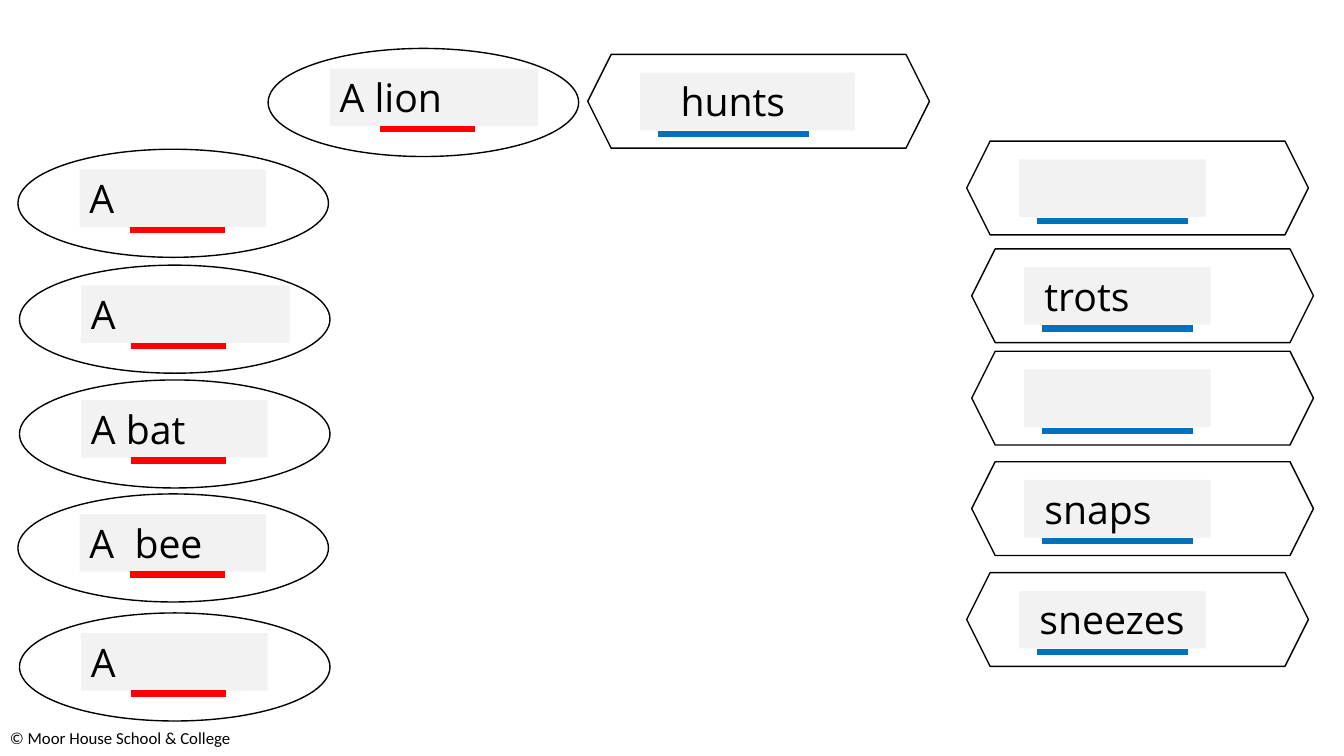
import pptx
import pptx.util
import pptx.dml.color
import pptx.enum.shapes
import pptx.enum.text
from dataclasses import dataclass
from lxml import etree

Pt = pptx.util.Pt
RGB = pptx.dml.color.RGBColor.from_string
SHAPE = pptx.enum.shapes.MSO_SHAPE
A_NS = "http://schemas.openxmlformats.org/drawingml/2006/main"


@dataclass(frozen=True)
class Theme:
    ink: str = "000000"
    label_fill: str = "F2F2F2"
    noun: str = "FF0000"
    verb: str = "0070C0"
    word_font: str = "Open Sans"
    word_size: float = 28
    footer_font: str = "Calibri"
    footer_size: float = 12
    outline: float = 1
    underline: float = 4.5


@dataclass(frozen=True)
class CardKind:
    """Preset, size, and the offsets of label and underline within a card."""
    preset: int
    size: tuple
    label: tuple
    underline: tuple
    underline_width: float
    color: str


THEME = Theme()
NOUN = CardKind(SHAPE.OVAL, (221.8, 77.2), (44, 14.4), (80, 57.6), 67.7, THEME.noun)
VERB = CardKind(SHAPE.HEXAGON, (244.1, 67), (37.4, 13), (50.4, 56.9), 107.5, THEME.verb)
LABEL_HEIGHT = 41.2
NARROW, WIDE, WIDEST = 133.2, 149, 153.4


class Deck:
    def __init__(self, slide, theme):
        self.s = slide
        self.theme = theme

    def text(self, shapes, box, words, font, size, indent=0):
        sp = shapes.add_textbox(*map(Pt, box))
        tf = sp.text_frame
        tf.word_wrap = True
        tf.auto_size = pptx.enum.text.MSO_AUTO_SIZE.NONE
        tf.margin_left = Pt(7.2 + indent)
        p = tf.paragraphs[0]
        p.text = words
        p.font.name = font
        p.font.size = Pt(size)
        p.font.color.rgb = RGB(self.theme.ink)
        return sp

    def outline(self, shapes, preset, box):
        sp = shapes.add_shape(preset, *map(Pt, box))
        sp.shadow.inherit = False
        sp.fill.background()
        sp.line.color.rgb = RGB(self.theme.ink)
        sp.line.width = Pt(self.theme.outline)

    def underline(self, shapes, x, y, width, color):
        cx = shapes.add_connector(pptx.enum.shapes.MSO_CONNECTOR.STRAIGHT,
                                  Pt(x), Pt(y), Pt(x + width), Pt(y))
        cx.line.color.rgb = RGB(color)
        cx.line.width = Pt(self.theme.underline)
        etree.SubElement(cx._element.spPr, f"{{{A_NS}}}effectLst")

    def card(self, kind, x, y, words, label_width=NARROW, indent=0):
        shapes = self.s.shapes.add_group_shape().shapes
        self.outline(shapes, kind.preset, (x, y, *kind.size))
        dx, dy = kind.label
        label = self.text(shapes, (x + dx, y + dy, label_width, LABEL_HEIGHT), words,
                          self.theme.word_font, self.theme.word_size, indent)
        label.fill.solid()
        label.fill.fore_color.rgb = RGB(self.theme.label_fill)
        dx, dy = kind.underline
        self.underline(shapes, x + dx, y + dy, kind.underline_width, kind.color)

    def footer(self, words):
        self.text(self.s.shapes, (0, 516.2, 307.4, 21.6), words,
                  self.theme.footer_font, self.theme.footer_size)


def main():
    prs = pptx.Presentation()
    prs.slide_width, prs.slide_height = Pt(960), Pt(540)
    deck = Deck(prs.slides.add_slide(prs.slide_layouts[6]), THEME)

    deck.footer("© Moor House School & College")

    # Example sentence
    deck.card(NOUN, 191.5, 34.6, "A lion", WIDE)
    deck.card(VERB, 419.8, 38.9, "hunts", WIDEST, indent=21.8)

    # Nouns on the left
    for x, y, words, width in [
        (12.8, 106.6, "A", NARROW),
        (13.9, 189.4, "A", WIDE),
        (13.9, 271.4, "A bat", NARROW),
        (12.8, 352.8, "A  bee", NARROW),
        (13.9, 437.8, "A", NARROW),
    ]:
        deck.card(NOUN, x, y, words, width)

    # Verbs on the right
    for x, y, words in [
        (690.5, 100.8, ""),
        (694.1, 177.8, "trots"),
        (694.1, 250.9, ""),
        (694.1, 329.8, "snaps"),
        (690.5, 409, "sneezes"),
    ]:
        deck.card(VERB, x, y, words, indent=7.3)

    prs.save("out.pptx")


if __name__ == "__main__":
    main()
